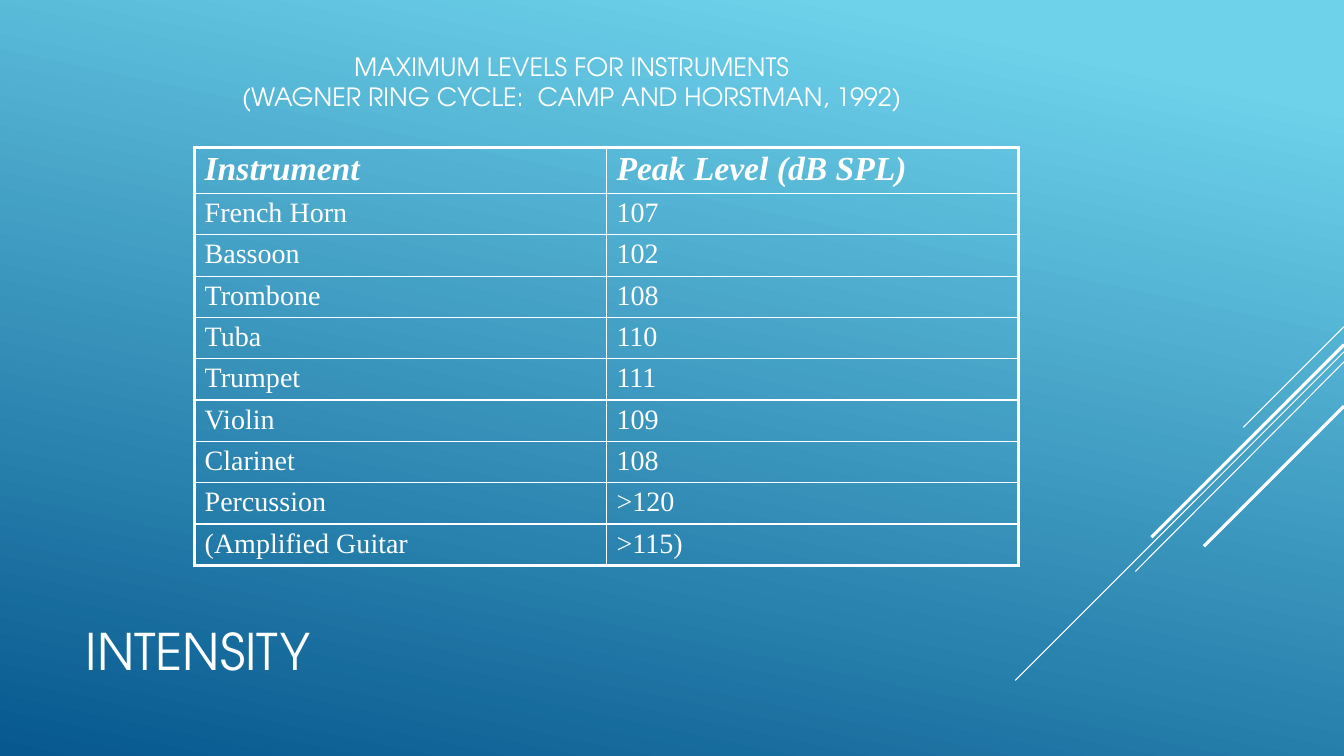
from lxml import etree
from pptx import Presentation, util as u
from pptx.dml.color import RGBColor
from pptx.enum import shapes, text
from pptx.oxml.ns import qn

COLOURS = {"ink": "FFFFFF", "sky": "6ED2EB", "sea": "06588E"}
HEADING_FONT, TABLE_FONT = "TeX Gyre Adventor", "Times New Roman"
THICK, THIN = 2.25, 1

STREAKS = [
    (3.24, 12.33, 4.24, 0.75),
    (3.49, 10.07, 6.75, 0.75),
    (3.59, 11.26, 5.67, 0.75),
    (3.42, 11.42, 5.33, 2.25),
    (4.03, 11.94, 5.42, 2.25),
]
LEVELS = [
    ("Instrument", "Peak Level (dB SPL)"),
    ("French Horn", "107"),
    ("Bassoon", "102"),
    ("Trombone", "108"),
    ("Tuba", "110"),
    ("Trumpet", "111"),
    ("Violin", "109"),
    ("Clarinet", "108"),
    ("Percussion", ">120"),
    ("(Amplified Guitar", ">115)"),
]


def colour(name):
    """Return the named colour of the slide."""
    return RGBColor.from_string(COLOURS[name])


class Deck:
    """Holds the presentation, its style and the current slide."""

    def __init__(self):
        self.show = Presentation()
        self.show.slide_width, self.show.slide_height = u.Inches(13.33), u.Inches(7.5)
        self.slide = self.show.slides.add_slide(self.show.slide_layouts[5])

    def background(self):
        fill = self.slide.background.fill
        fill.gradient()
        fill.gradient_angle = 258
        for stop, position, name in zip(fill.gradient_stops, (0.1, 1), ("sky", "sea")):
            stop.position = position
            stop.color.rgb = colour(name)

    def style(self, frame, font, size, align=text.PP_ALIGN.LEFT, strong=False):
        for paragraph in frame.paragraphs:
            paragraph.alignment = align
            for run in paragraph.runs:
                run.font.name, run.font.size = font, u.Pt(size)
                run.font.bold = run.font.italic = strong
                run.font.color.rgb = colour("ink")

    def title(self, words, left, top, width, height):
        heading = self.slide.shapes.title
        heading.left, heading.top = u.Inches(left), u.Inches(top)
        heading.width, heading.height = u.Inches(width), u.Inches(height)
        frame = heading.text_frame
        frame.text = words
        frame.auto_size = text.MSO_AUTO_SIZE.NONE
        frame.vertical_anchor = text.MSO_ANCHOR.MIDDLE
        self.style(frame, HEADING_FONT, 36)

    def caption(self, words, left, top, width, height):
        box = self.slide.shapes.add_textbox(*map(u.Inches, (left, top, width, height)))
        frame = box.text_frame
        frame.word_wrap = True
        frame.text = words
        self.style(frame, HEADING_FONT, 18, text.PP_ALIGN.CENTER)

    def line(self, x1, y1, x2, y2, weight):
        streak = self.slide.shapes.add_connector(
            shapes.MSO_CONNECTOR.STRAIGHT, *map(u.Inches, (x1, y1, x2, y2)))
        streak.line.color.rgb = colour("ink")
        streak.line.width = u.Pt(weight)
        etree.SubElement(streak._element.spPr, qn("a:effectLst"))

    def border(self, cell, side, weight):
        edge = etree.SubElement(cell._tc.get_or_add_tcPr(), qn(f"a:ln{side}"), w=str(u.Pt(weight)))
        solid = etree.SubElement(edge, qn("a:solidFill"))
        etree.SubElement(solid, qn("a:srgbClr"), val=COLOURS["ink"])

    def table(self, rows, left, top, width, header_height, row_height):
        last_row, last_column = len(rows) - 1, len(rows[0]) - 1
        height = header_height + last_row * row_height
        grid = self.slide.shapes.add_table(
            len(rows), len(rows[0]), *map(u.Inches, (left, top, width, height))).table
        grid.first_row = grid.horz_banding = False
        for r, row in enumerate(rows):
            grid.rows[r].height = u.Inches(row_height if r else header_height)
            for c, words in enumerate(row):
                cell = grid.cell(r, c)
                cell.text_frame.text = words
                cell.text_frame.paragraphs[0].line_spacing = 0.9
                cell.vertical_anchor = text.MSO_ANCHOR.MIDDLE
                self.style(cell.text_frame, TABLE_FONT, 20 if r else 24, strong=r == 0)
                outer = {"L": c == 0, "R": c == last_column, "T": r == 0, "B": r == last_row}
                for side, is_outer in outer.items():
                    self.border(cell, side, THICK if is_outer else THIN)
                cell.fill.background()


def main():
    """Build the slide and save it."""
    deck = Deck()
    deck.background()
    for start_y, end_x, end_y, weight in STREAKS:
        deck.line(13.33, start_y, end_x, end_y, weight)
    deck.title("INTENSITY", 0.75, 5.63, 9.33, 1.65)
    deck.table(LEVELS, 1.93, 1.46, 8.17, 0.46, 0.41)
    deck.caption("MAXIMUM LEVELS FOR INSTRUMENTS\v(WAGNER RING CYCLE:  CAMP AND HORSTMAN, 1992)",
                 2.1, 0.46, 7.14, 0.71)
    deck.show.save("out.pptx")


if __name__ == "__main__":
    main()
